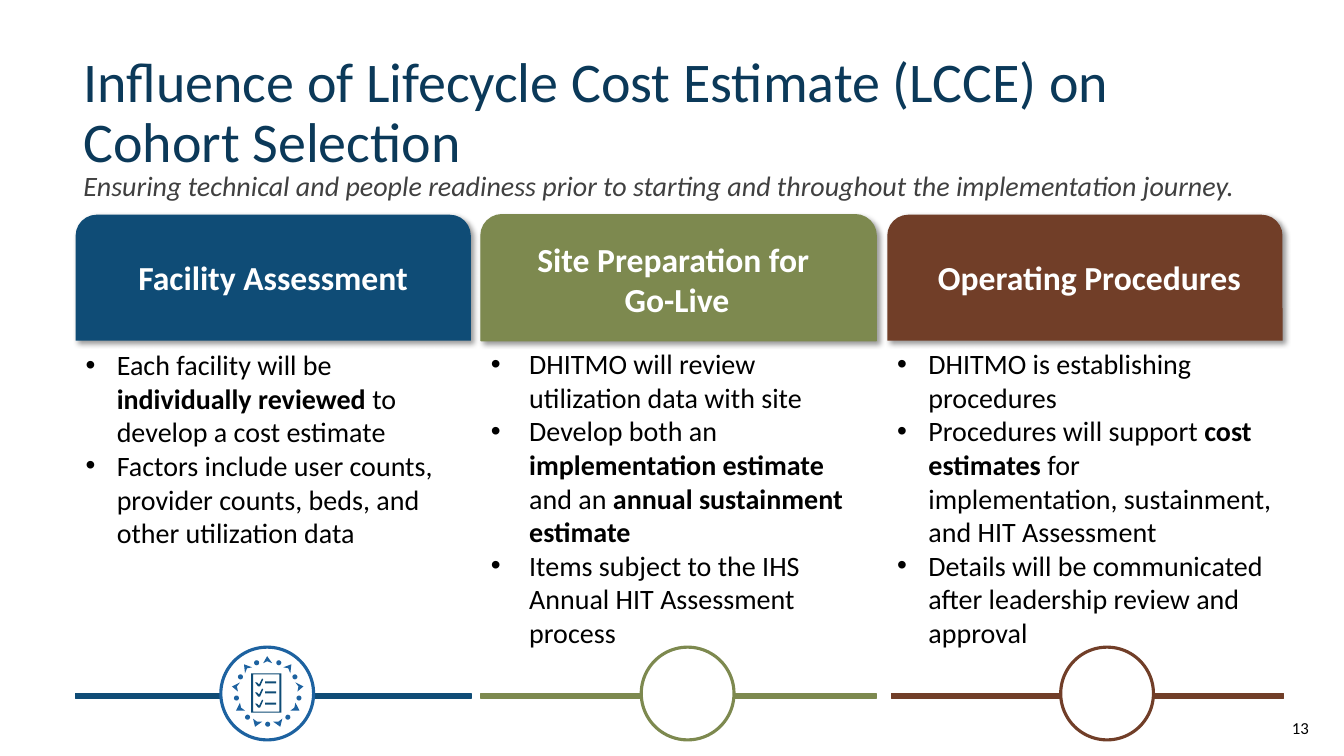
from lxml.etree import SubElement
from pptx import Presentation
from pptx.dml.color import RGBColor
from pptx.enum.shapes import MSO_SHAPE as Shape
from pptx.enum.text import MSO_ANCHOR as Anchor, PP_ALIGN as Align
from pptx.oxml.ns import qn
from pptx.util import Pt

PX = 9144
FONT = "Calibri"
COLORS = {
    "white": "FFFFFF", "black": "000000", "title": "0B3959", "subtitle": "404040",
    "navy": "0F4C76", "olive": "7D894F", "brown": "713E28", "blue": "1D62A0",
}
COLUMNS = [
    {
        "color": "navy", "header": (75, 213, 392, 125), "header_line": 0,
        "label": (75, 250, 392, 50), "heading": "Facility Assessment",
        "body": (75, 340, 392, 212), "indent": 31,
        "bullets": [
            ("Each facility will be ", "individually reviewed", " to develop a cost estimate"),
            ("Factors include user counts, provider counts, beds, and other utilization data",),
        ],
        "bar": (75, 688, 392, 5), "ring_left": 219, "ring_color": "blue",
    },
    {
        "color": "olive", "header": (477, 213, 392, 125), "header_line": 1,
        "label": (474, 232, 395, 91), "heading": "Site Preparation for \nGo-Live",
        "body": (477, 339, 392, 313), "indent": 38,
        "bullets": [
            ("DHITMO will review utilization data with site",),
            ("Develop both an ", "implementation estimate ", "and an ",
             "annual sustainment estimate"),
            ("Items subject to the IHS Annual HIT Assessment process",),
        ],
        "bar": (477, 688, 392, 5), "ring_left": 636, "ring_color": "olive",
    },
    {
        "color": "brown", "header": (880, 213, 392, 125), "header_line": 0,
        "label": (916, 250, 329, 50), "heading": "Operating Procedures",
        "body": (880, 339, 392, 313), "indent": 31,
        "bullets": [
            ("DHITMO is establishing procedures",),
            ("Procedures will support ", "cost estimates",
             " for implementation, sustainment, and HIT Assessment"),
            ("Details will be communicated after leadership review and approval",),
        ],
        "bar": (884, 688, 389, 5), "ring_left": 1052, "ring_color": "brown",
    },
]
ICON_MIRROR = 531
TOP_ARROW = [(270, 658), (265, 656), (261, 658), (265, 651)]
LEFT_ARROWS = [
    [(250, 662), (245, 663), (243, 668), (242, 659)],
    [(238, 677), (235, 681), (236, 686), (230, 681)],
    [(238, 697), (239, 702), (243, 705), (234, 705)],
    [(251, 713), (255, 716), (260, 716), (253, 721)],
]
BOTTOM_DOT = (263, 716)
LEFT_DOTS = [(236, 669), (252, 655), (232, 690), (243, 709)]
DOT_SIZE = 5
SHEET_OUTER = [(249, 668), (279, 668), (279, 707), (249, 707)]
SHEET_INNER = [(251, 669), (251, 706), (277, 706), (277, 669)]
CHECK = [(253, 677), (255, 677), (257, 679), (260, 673), (261, 674), (258, 681), (256, 681)]
CHECK_ROWS = (0, 10, 21)


def rgb(name):
    """Return the named colour."""
    return RGBColor.from_string(COLORS[name])


def emu(lengths):
    """Convert px lengths to EMU."""
    return [length * PX for length in lengths]


def paint(shape, fill, line=None, width=0):
    """Set fill and outline and remove the shadow."""
    shape.shadow.inherit = False
    shape.fill.solid()
    shape.fill.fore_color.rgb = rgb(fill)
    if width:
        shape.line.color.rgb = rgb(line)
        shape.line.width = Pt(width)
    else:
        shape.line.fill.background()


def add_block(shapes, kind, area, fill, line=None, width=0):
    """Add a painted preset shape."""
    shape = shapes.add_shape(kind, *emu(area))
    paint(shape, fill, line, width)
    return shape


def add_outline(shapes, color, *contours):
    """Add a filled freeform made of closed contours."""
    builder = shapes.build_freeform(*contours[0][0], scale=PX)
    for number, contour in enumerate(contours):
        if number:
            builder.move_to(*contour[0])
        builder.add_line_segments(contour[1:], close=True)
    paint(builder.convert_to_shape(), color)


def add_shadow(shape):
    """Give a shape a soft shadow to the lower right."""
    effects = shape._element.spPr.find(qn("a:effectLst"))
    shadow = SubElement(effects, qn("a:outerShdw"), blurRad="50800", dist="38100",
                        dir="2700000", algn="tl", rotWithShape="0")
    tint = SubElement(shadow, qn("a:srgbClr"), val=COLORS["black"])
    SubElement(tint, qn("a:alpha"), val="40000")


def style(font, size, color, bold=False, italic=False):
    """Set the look of a font."""
    font.name, font.size, font.bold, font.italic = FONT, Pt(size), bold, italic
    font.color.rgb = rgb(color)


def add_text(page, area, text, size, color, align=Align.LEFT, spacing=1.0,
             bold=False, italic=False, anchor=Anchor.TOP):
    """Add a text box with one style throughout."""
    box = page.shapes.add_textbox(*emu(area))
    frame = box.text_frame
    frame.word_wrap = True
    frame.vertical_anchor = anchor
    frame.text = text
    for para in frame.paragraphs:
        para.alignment = align
        para.line_spacing = spacing
        for span in para.runs:
            style(span.font, size, color, bold, italic)


def add_bullets(page, area, bullets, indent):
    """Add a bulleted list whose spans alternate plain and bold."""
    frame = page.shapes.add_textbox(*emu(area)).text_frame
    frame.word_wrap = True
    for number, spans in enumerate(bullets):
        para = frame.add_paragraph() if number else frame.paragraphs[0]
        properties = para._p.get_or_add_pPr()
        properties.set("marL", str(indent * PX))
        properties.set("indent", str(-indent * PX))
        SubElement(properties, qn("a:buFont"), typeface="Arial")
        SubElement(properties, qn("a:buChar"), char="•")
        for position, text in enumerate(spans):
            span = para.add_run()
            span.text = text
            style(span.font, 20, "black", bold=position % 2 == 1)


def add_column(page, column):
    """Add a header with its label and bullets."""
    color = column["color"]
    header = add_block(page.shapes, Shape.ROUND_2_SAME_RECTANGLE, column["header"],
                       color, color, column["header_line"])
    add_shadow(header)
    add_text(page, column["label"], column["heading"], 24, "white", Align.CENTER, bold=True)
    add_bullets(page, column["body"], column["bullets"], column["indent"])


def add_checklist_icon(page):
    """Draw a checklist inside a wreath of arrows and dots."""
    wreath = page.shapes.add_group_shape().shapes
    add_outline(wreath, "blue", TOP_ARROW)
    for arrow in LEFT_ARROWS:
        add_outline(wreath, "blue", arrow)
        add_outline(wreath, "blue", [(ICON_MIRROR - x, y) for x, y in arrow])
    mirrored = [(ICON_MIRROR - DOT_SIZE - x, y) for x, y in LEFT_DOTS]
    for x, y in [BOTTOM_DOT, *LEFT_DOTS, *mirrored]:
        add_block(wreath, Shape.OVAL, (x, y, DOT_SIZE, DOT_SIZE), "blue")
    sheet = page.shapes.add_group_shape().shapes
    add_outline(sheet, "navy", SHEET_OUTER, SHEET_INNER)
    for drop in CHECK_ROWS:
        add_outline(sheet, "navy", [(x, y + drop) for x, y in CHECK])
        add_block(sheet, Shape.RECTANGLE, (263, 676 + drop, 11, 2), "navy")


def main():
    """Build the slide and save it."""
    deck = Presentation()
    deck.slide_width, deck.slide_height = emu((1333, 750))
    page = deck.slides.add_slide(deck.slide_layouts[6])
    add_text(page, (1165, 702, 143, 40), "13", 12, "black", Align.RIGHT, anchor=Anchor.MIDDLE)
    add_text(page, (73, 48, 1138, 131),
             "Influence of Lifecycle Cost Estimate (LCCE) on Cohort Selection",
             40, "title", spacing=0.9, anchor=Anchor.MIDDLE)
    add_text(page, (73, 166, 1187, 40),
             "Ensuring technical and people readiness prior to starting and throughout "
             "the implementation journey.", 20, "subtitle", spacing=0.9, italic=True)
    for column in COLUMNS:
        add_column(page, column)
    for column in COLUMNS:
        add_block(page.shapes, Shape.RECTANGLE, column["bar"], column["color"],
                  column["color"], 1)
        add_block(page.shapes, Shape.OVAL, (column["ring_left"], 642, 92, 92), "white",
                  column["ring_color"], 2.25)
    add_checklist_icon(page)
    deck.save("out.pptx")


if __name__ == "__main__":
    main()
